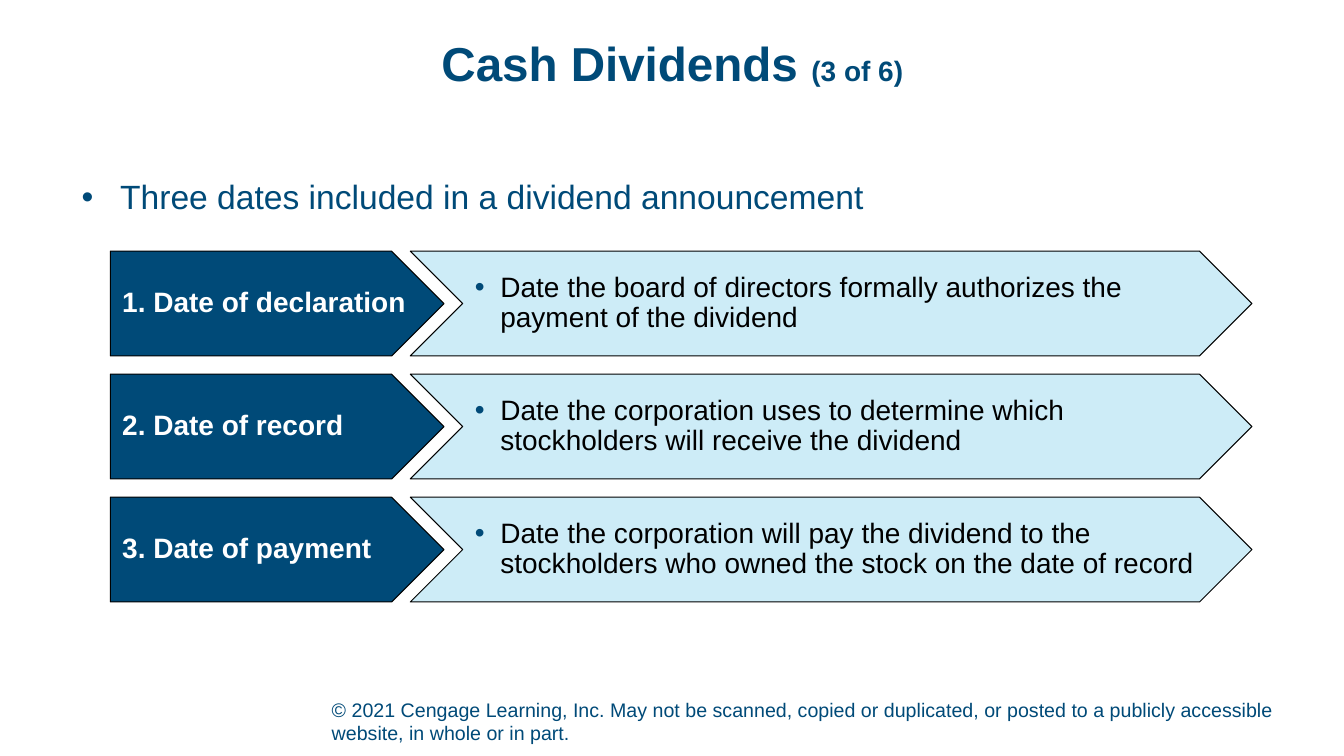
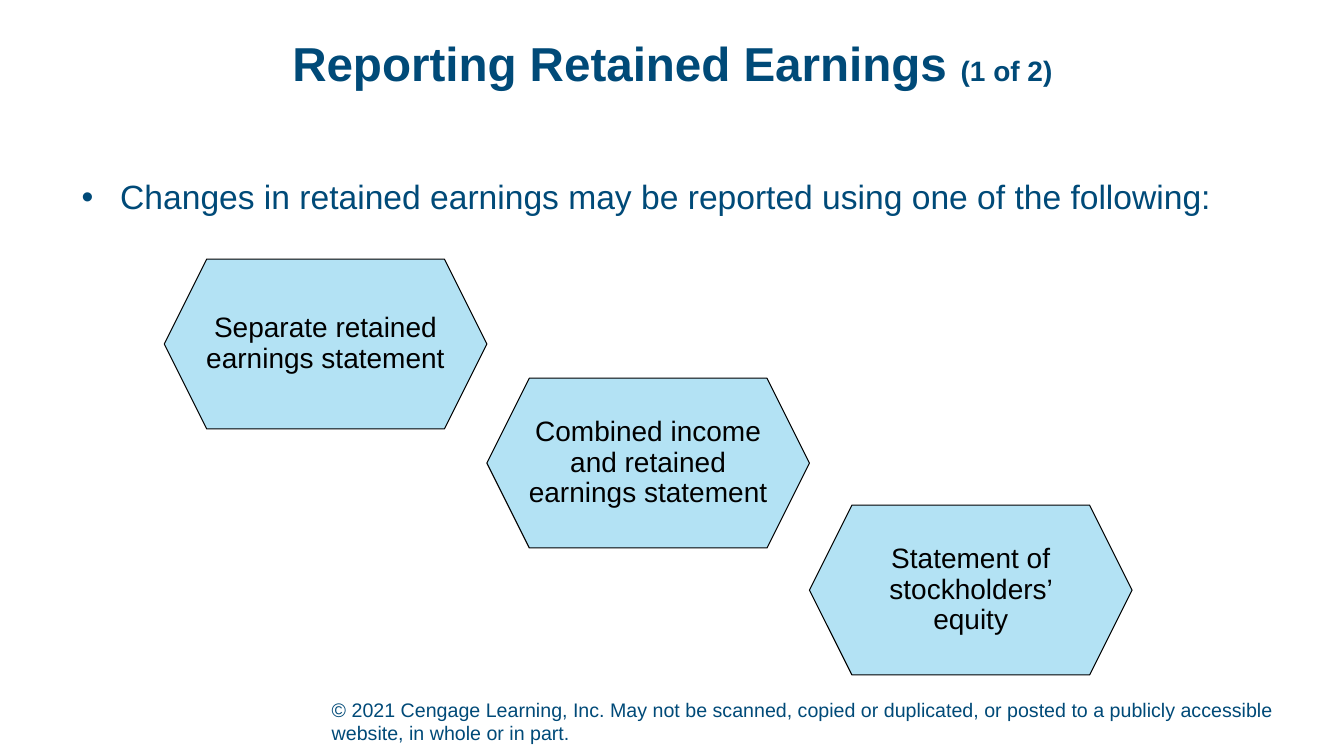
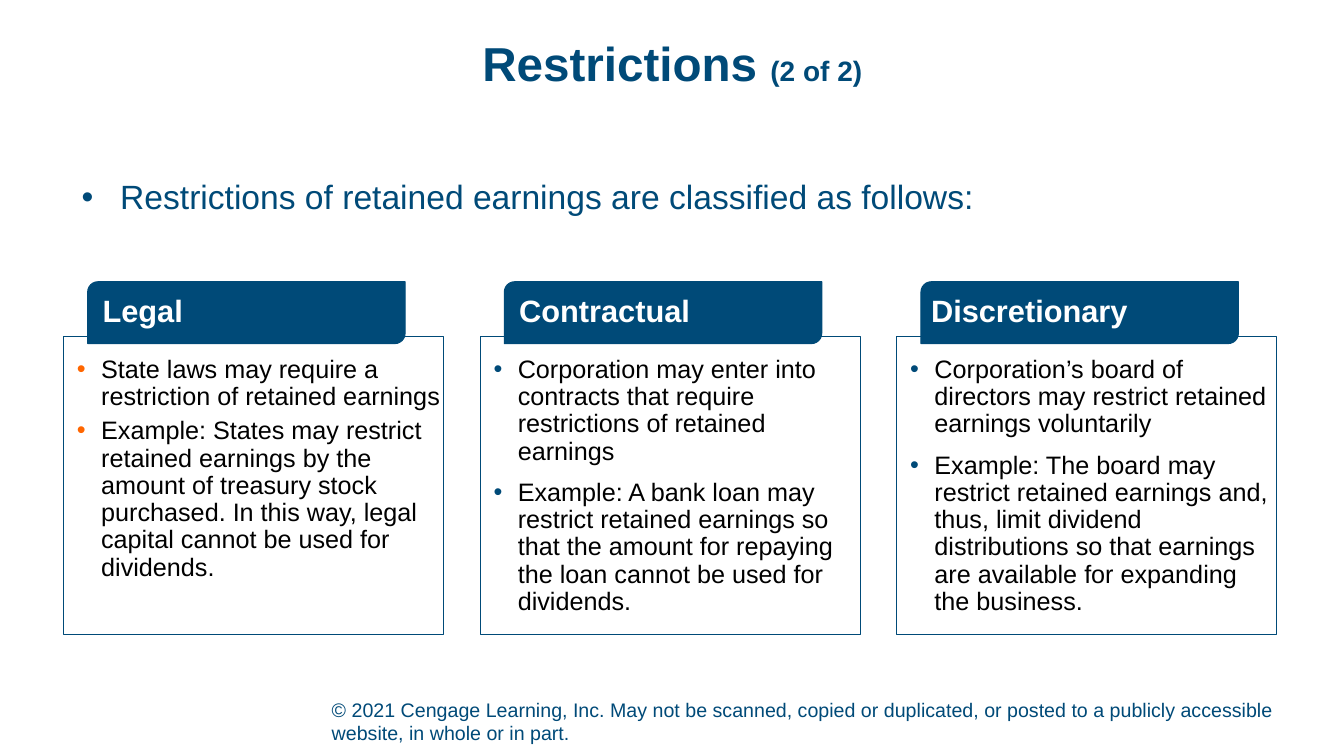
from lxml import etree
from pptx import Presentation
from pptx.dml.color import RGBColor
from pptx.enum.shapes import MSO_SHAPE
from pptx.enum.text import MSO_ANCHOR, MSO_AUTO_SIZE, PP_ALIGN
from pptx.oxml.ns import qn
from pptx.util import Cm, Pt

TOP, MIDDLE, BOTTOM = MSO_ANCHOR.TOP, MSO_ANCHOR.MIDDLE, MSO_ANCHOR.BOTTOM
LEFT, CENTER = PP_ALIGN.LEFT, PP_ALIGN.CENTER
PENTAGON, CHEVRON = MSO_SHAPE.PENTAGON, MSO_SHAPE.CHEVRON
HEXAGON, RECTANGLE = MSO_SHAPE.HEXAGON, MSO_SHAPE.RECTANGLE
TAB = MSO_SHAPE.ROUND_2_DIAG_RECTANGLE
NO_AUTOFIT = MSO_AUTO_SIZE.NONE
TITLE_ONLY = 5

FONT = "Arial"
COLORS = {
    "navy": "004A78",
    "pale": "CDECF7",
    "sky": "B3E2F4",
    "orange": "FF6600",
    "black": "000000",
    "white": "FFFFFF",
}

# Content
COPYRIGHT = (
    "© 2021 Cengage Learning, Inc. May not be scanned, copied or duplicated, "
    "or posted to a publicly accessible website, in whole or in part."
)
DIVIDENDS = {
    "title": ("Cash Dividends ", "(3 of 6)"),
    "lead": "Three dates included in a dividend announcement",
    "dates": [
        ("1. Date of declaration",
         "Date the board of directors formally authorizes the payment of the dividend"),
        ("2. Date of record",
         "Date the corporation uses to determine which stockholders will receive the dividend"),
        ("3. Date of payment",
         "Date the corporation will pay the dividend to the stockholders who owned "
         "the stock on the date of record"),
    ],
}
REPORTING = {
    "title": ("Reporting Retained Earnings ", "(1 of 2)"),
    "lead": "Changes in retained earnings may be reported using one of the following:",
    # statement, top in cm
    "statements": [
        ("Separate retained earnings statement", 6.53),
        ("Combined income and retained earnings statement", 9.53),
        ("Statement of stockholders’ equity", 12.73),
    ],
}
RESTRICTIONS = {
    "title": ("Restrictions ", "(2 of 2)"),
    "lead": "Restrictions of retained earnings are classified as follows:",
    # heading, heading indent in cm, bullet colour, gap in points, points
    "kinds": [
        ("Legal", 0.3, "orange", 5, [
            "State laws may require a restriction of retained earnings",
            "Example: States may restrict retained earnings by the amount of treasury "
            "stock purchased. In this way, legal capital cannot be used for dividends.",
        ]),
        ("Contractual", 0.3, "navy", 10, [
            "Corporation may enter into contracts that require restrictions of "
            "retained earnings",
            "Example: A bank loan may restrict retained earnings so that the amount "
            "for repaying the loan cannot be used for dividends.",
        ]),
        ("Discretionary", 0.18, "navy", 10, [
            "Corporation’s board of directors may restrict retained earnings voluntarily",
            "Example: The board may restrict retained earnings and, thus, limit dividend "
            "distributions so that earnings are available for expanding the business.",
        ]),
    ],
}


# Shared helpers
def rgb(color):
    return RGBColor.from_string(COLORS[color])


def place(shape, left, top, width, height):
    shape.left, shape.top = Cm(left), Cm(top)
    shape.width, shape.height = Cm(width), Cm(height)


def style_run(run, size, color, bold=False):
    run.font.name = FONT
    run.font.size = Pt(size)
    run.font.bold = bold
    run.font.color.rgb = rgb(color)


def indent(paragraph, margin, hanging=0, bullet=None):
    """Set the left margin and, with a colour given, a hanging bullet."""
    props = paragraph._p.get_or_add_pPr()
    props.set("marL", str(Cm(margin)))
    props.set("indent", str(-Cm(hanging)))
    if bullet:
        bullet_color = etree.SubElement(props, qn("a:buClr"))
        etree.SubElement(bullet_color, qn("a:srgbClr"), val=COLORS[bullet])
        etree.SubElement(props, qn("a:buFont"), typeface=FONT)
        etree.SubElement(props, qn("a:buChar"), char="•")


def set_frame(shape, anchor, top=0, bottom=0):
    frame = shape.text_frame
    frame.word_wrap = True
    frame.auto_size = NO_AUTOFIT
    frame.vertical_anchor = anchor
    frame.margin_left = frame.margin_right = 0
    frame.margin_top, frame.margin_bottom = Cm(top), Cm(bottom)
    return frame


def write(frame, texts, size, color, bold=False, align=LEFT, spacing=0.9,
          gap=10, margin=0, hanging=0, bullet=None):
    frame.text = "\n".join(texts)
    for number, paragraph in enumerate(frame.paragraphs):
        indent(paragraph, margin, hanging, bullet)
        paragraph.alignment = align
        paragraph.line_spacing = spacing
        if number:
            paragraph.space_before = Pt(gap)
        for run in paragraph.runs:
            style_run(run, size, color, bold)


def add_box(slide, kind, box, fill, line):
    shape = slide.shapes.add_shape(kind, *map(Cm, box))
    shape.shadow.inherit = False
    if fill:
        shape.fill.solid()
        shape.fill.fore_color.rgb = rgb(fill)
    else:
        shape.fill.background()
    shape.line.color.rgb = rgb(line)
    shape.line.width = Pt(0.75)
    return shape


def start_slide(deck, content):
    """Add a slide with the copyright line, title and lead bullet."""
    slide = deck.slides.add_slide(deck.slide_layouts[TITLE_ONLY])
    name, part = content["title"]

    footer = slide.shapes.add_textbox(Cm(8.36), Cm(17.58), Cm(24.87), Cm(1.32))
    write(set_frame(footer, BOTTOM, bottom=0.13), [COPYRIGHT], 14, "navy", spacing=1.0)

    title = slide.shapes.title
    place(title, 2.34, 1.02, 29.21, 1.88)
    frame = set_frame(title, TOP)
    write(frame, [name], 34, "navy", bold=True, align=CENTER)
    part_run = frame.paragraphs[0].add_run()
    part_run.text = part
    style_run(part_run, 20, "navy", bold=True)

    lead = slide.shapes.add_textbox(Cm(2.06), Cm(4.55), Cm(29.74), Cm(1.55))
    write(set_frame(lead, TOP), [content["lead"]], 24, "navy",
          margin=0.97, hanging=0.97, bullet="navy")
    return slide


# Slides
def add_dividends(deck):
    slide = start_slide(deck, DIVIDENDS)
    first_top, pitch, height = 6.33, 3.1, 2.64
    for row, (date, meaning) in enumerate(DIVIDENDS["dates"]):
        top = first_top + row * pitch
        label = add_box(slide, PENTAGON, (2.78, top, 8.41, height), "navy", "black")
        write(set_frame(label, MIDDLE), [date], 20, "white", bold=True, margin=0.3)
        detail = add_box(slide, CHEVRON, (10.34, top, 21.21, height), "pale", "black")
        write(set_frame(detail, MIDDLE), [meaning], 20, "black",
              margin=0.95, hanging=0.64, bullet="navy")


def add_reporting(deck):
    slide = start_slide(deck, REPORTING)
    left, width, height = 4.14, 8.13, 4.28
    for step, (statement, top) in enumerate(REPORTING["statements"]):
        box = (left + step * width, top, width, height)
        hexagon = add_box(slide, HEXAGON, box, "sky", "black")
        write(set_frame(hexagon, MIDDLE), [statement], 20, "black", align=CENTER)


def add_restrictions(deck):
    slide = start_slide(deck, RESTRICTIONS)
    first_left, pitch, tab_offset = 1.6, 10.5, 0.61
    for column, (heading, margin, bullet, gap, points) in enumerate(RESTRICTIONS["kinds"]):
        left = first_left + column * pitch
        tab = add_box(slide, TAB, (left + tab_offset, 7.1, 8.0, 1.56), "navy", "navy")
        write(set_frame(tab, MIDDLE), [heading], 22, "white", bold=True, margin=margin)
        panel = add_box(slide, RECTANGLE, (left, 8.48, 9.58, 7.5), None, "navy")
        write(set_frame(panel, TOP, top=0.51), points, 18, "black",
              gap=gap, margin=0.95, hanging=0.61, bullet=bullet)


def main():
    deck = Presentation()
    deck.slide_width, deck.slide_height = Cm(33.87), Cm(19.05)
    add_dividends(deck)
    add_reporting(deck)
    add_restrictions(deck)
    deck.save("out.pptx")


if __name__ == "__main__":
    main()
